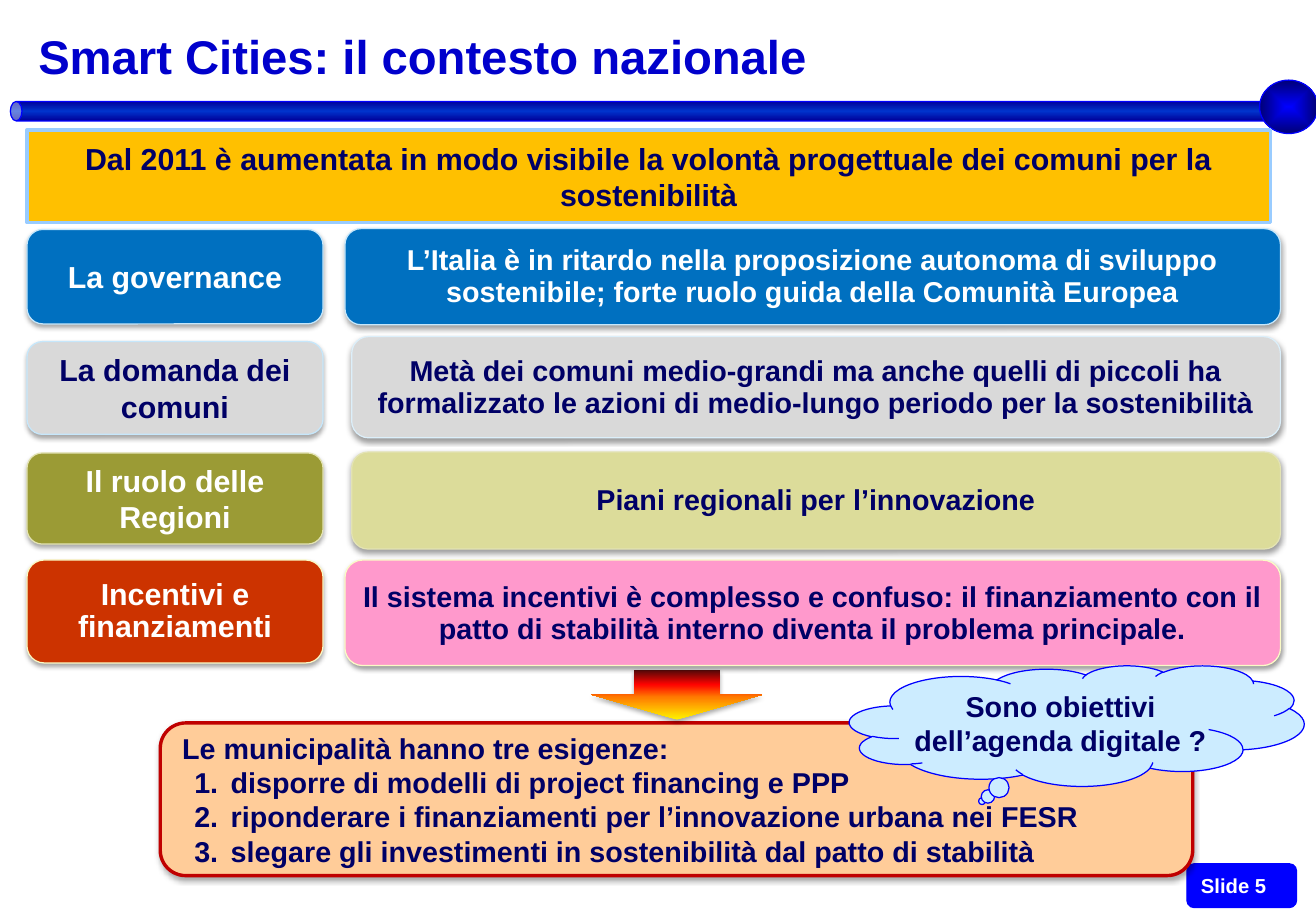
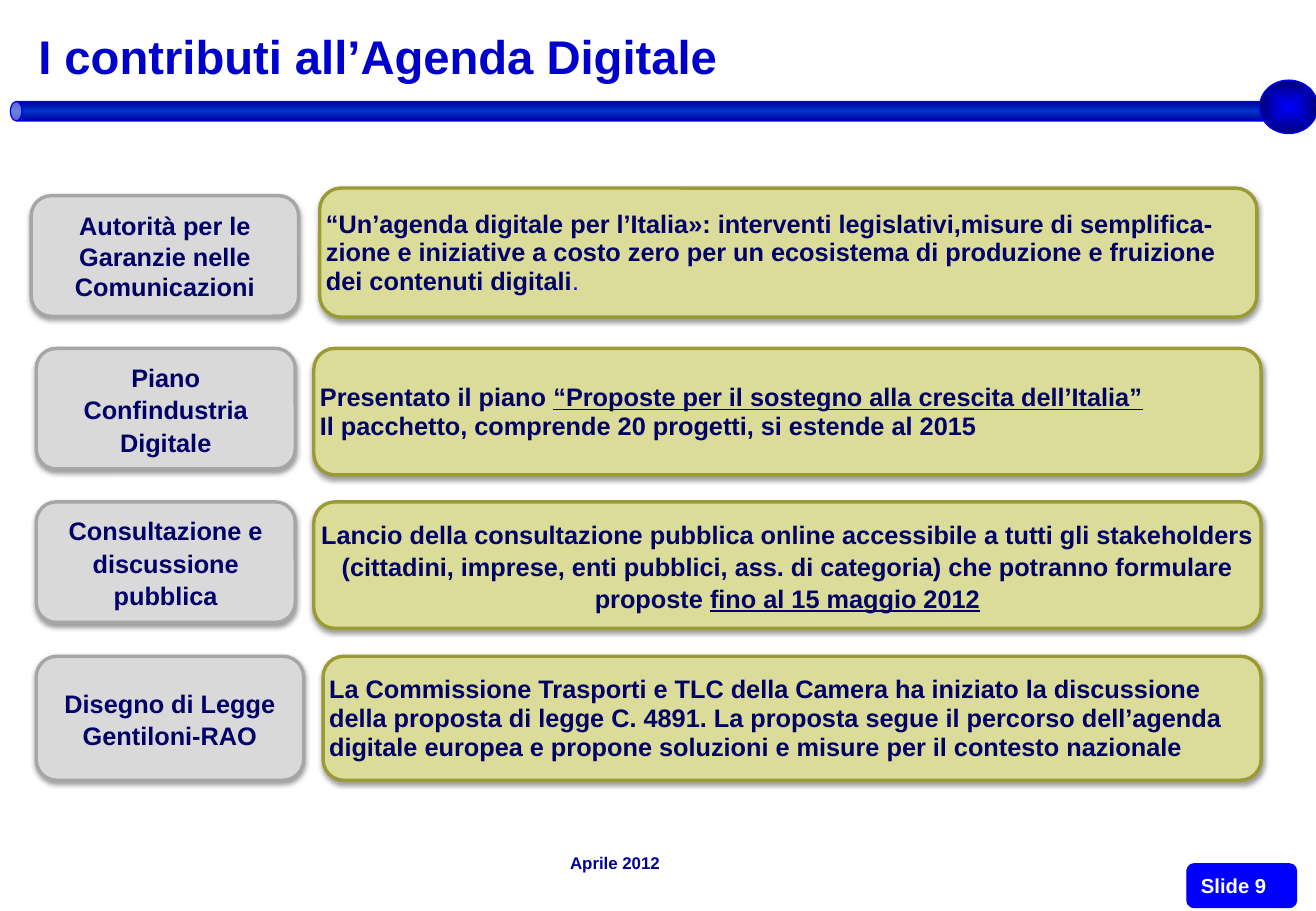
from pptx import Presentation
from pptx.dml.color import RGBColor
from pptx.enum.shapes import MSO_SHAPE
from pptx.enum.text import MSO_ANCHOR, MSO_AUTO_SIZE, PP_ALIGN
from pptx.oxml import parse_xml
from pptx.oxml.ns import nsdecls, qn
from pptx.util import Pt
from lxml import etree

RECT, ROUNDED = MSO_SHAPE.RECTANGLE, MSO_SHAPE.ROUNDED_RECTANGLE
CAN, BALL = MSO_SHAPE.CAN, MSO_SHAPE.OVAL
DOWN_ARROW, CLOUD = MSO_SHAPE.DOWN_ARROW, MSO_SHAPE.CLOUD_CALLOUT
LEFT, CENTER = PP_ALIGN.LEFT, PP_ALIGN.CENTER
TOP, MIDDLE = MSO_ANCHOR.TOP, MSO_ANCHOR.MIDDLE
NO_AUTOFIT = MSO_AUTO_SIZE.NONE

FONT = "Arial"
WHITE = RGBColor(0xFF, 0xFF, 0xFF)
NAVY = RGBColor(0x00, 0x00, 0x66)
TITLE_BLUE = RGBColor(0x00, 0x00, 0xCC)
DATE_BLUE = RGBColor(0x00, 0x00, 0x99)
BAR_BLUE = RGBColor(0x00, 0x33, 0xCC)
BALL_BLUE = RGBColor(0x00, 0x00, 0x76)
PURE_BLUE = RGBColor(0x00, 0x00, 0xFF)
AZURE = RGBColor(0x00, 0x70, 0xC0)
SKY = RGBColor(0x99, 0xCC, 0xFF)
PALE_SKY = RGBColor(0xC6, 0xE7, 0xFB)
MIST = RGBColor(0xDC, 0xEF, 0xFA)
CLOUD_BLUE = RGBColor(0xCC, 0xEC, 0xFF)
GOLD = RGBColor(0xFF, 0xC0, 0x00)
LIGHT_GREY = RGBColor(0xD9, 0xD9, 0xD9)
MID_GREY = RGBColor(0xA6, 0xA6, 0xA6)
OLIVE = RGBColor(0x9B, 0x9B, 0x35)
PALE_OLIVE = RGBColor(0xDC, 0xDC, 0x9A)
OLIVE_EDGE = RGBColor(0xE3, 0xE3, 0xB4)
BRICK = RGBColor(0xCC, 0x33, 0x00)
PINK = RGBColor(0xFF, 0x99, 0xCC)
CREAM = RGBColor(0xFB, 0xFB, 0xC6)
PEACH = RGBColor(0xFF, 0xCC, 0x99)
DARK_RED = RGBColor(0xC0, 0x00, 0x00)
YELLOW = RGBColor(0xFF, 0xF2, 0x00)
ORANGE = RGBColor(0xFF, 0x7A, 0x00)
RED = RGBColor(0xFF, 0x03, 0x00)
MAROON = RGBColor(0x4D, 0x08, 0x08)

PLAIN_INSETS = (7.2, 3.6, 7.2, 3.6)
SIDE_TO_SIDE = (0, 3.6, 0, 3.6)
DETAIL_RIGHT = 759

CONTEXT_ROWS = [
    dict(label="La governance", label_box=(136, 56), label_fill=AZURE,
         label_edge=PALE_SKY, label_color=WHITE, label_spacing=None,
         detail="L’Italia è in ritardo nella proposizione autonoma di sviluppo "
                "sostenibile; forte ruolo guida della Comunità Europea",
         detail_box=(204.5, 135.5, 57), detail_fill=AZURE,
         detail_edge=PALE_SKY, detail_color=WHITE),
    dict(label="La domanda dei comuni", label_box=(202.5, 55), label_fill=LIGHT_GREY,
         label_edge=PALE_SKY, label_color=NAVY, label_spacing=None,
         detail="Metà dei comuni medio-grandi ma anche quelli di piccoli ha "
                "formalizzato le azioni di medio-lungo periodo per la sostenibilità",
         detail_box=(208.5, 199.5, 60), detail_fill=LIGHT_GREY,
         detail_edge=MIST, detail_color=NAVY),
    dict(label="Il ruolo delle Regioni", label_box=(268.5, 54), label_fill=OLIVE,
         label_edge=OLIVE_EDGE, label_color=WHITE, label_spacing=None,
         detail="Piani regionali per l’innovazione",
         detail_box=(208.5, 268, 57.5), detail_fill=PALE_OLIVE,
         detail_edge=OLIVE_EDGE, detail_color=NAVY),
    dict(label="Incentivi e finanziamenti", label_box=(332, 61), label_fill=BRICK,
         label_edge=CREAM, label_color=WHITE, label_spacing=Pt(19),
         detail="Il sistema incentivi è complesso e confuso: il finanziamento con il "
                "patto di stabilità interno diventa il problema principale.",
         detail_box=(204.5, 332, 62.5), detail_fill=PINK,
         detail_edge=CREAM, detail_color=NAVY),
]

NEEDS = [
    "Le municipalità hanno tre esigenze:",
    "disporre di modelli di project financing e PPP",
    "riponderare i finanziamenti per l’innovazione urbana nei FESR",
    "slegare gli investimenti in sostenibilità dal patto di stabilità",
]

UNDERLINED = dict(underline=True)
CONTRIBUTIONS = [
    dict(label=["Autorità per le Garanzie nelle Comunicazioni"],
         label_box=(18.5, 116, 158.5, 71.5), label_spacing=Pt(18),
         detail=[[("“Un’agenda digitale per l’Italia»: interventi legislativi,misure di "
                   "semplifica-zione e iniziative a costo zero per un ecosistema di "
                   "produzione e fruizione dei contenuti digitali", {}),
                  (".", dict(color=PURE_BLUE, bold=False))]],
         detail_box=(189.5, 111.5, 555.5, 76.5), align=LEFT, spacing=Pt(17)),
    dict(label=["Piano", "Confindustria Digitale"],
         label_box=(21.5, 206.5, 153.5, 71.5), label_spacing=Pt(19.2),
         detail=[[("Presentato il piano ", {}),
                  ("“Proposte per il sostegno alla crescita dell’Italia”", UNDERLINED)],
                 "Il pacchetto, comprende 20 progetti, si estende al 2015"],
         detail_box=(186, 206.5, 561.5, 75), align=LEFT, spacing=Pt(17)),
    dict(label=["Consultazione e discussione pubblica"],
         label_box=(21.5, 297.5, 153.5, 71.5), label_spacing=Pt(19.2),
         detail=[[("Lancio della consultazione pubblica online accessibile a tutti gli "
                   "stakeholders (cittadini, imprese, enti pubblici, ass. di categoria) "
                   "che potranno formulare proposte ", {}),
                  ("fino al 15 maggio 2012", UNDERLINED)]],
         detail_box=(186, 297.5, 561.5, 75), align=CENTER, spacing=Pt(19)),
    dict(label=["Disegno di Legge Gentiloni-RAO"],
         label_box=(21.5, 389, 158.5, 73.5), label_spacing=Pt(19.2),
         detail=["La Commissione Trasporti e TLC della Camera ha iniziato la discussione "
                 "della proposta di legge C. 4891. La proposta segue il percorso "
                 "dell’agenda digitale europea e propone soluzioni e misure per il "
                 "contesto nazionale"],
         detail_box=(191.5, 389, 556, 73.5), align=LEFT, spacing=Pt(17)),
]


def number_paragraph(paragraph):
    """Give a paragraph an automatic number with a hanging indent."""
    properties = paragraph._p.get_or_add_pPr()
    properties.set("marL", str(Pt(28.8)))
    properties.set("indent", str(-Pt(21.6)))
    etree.SubElement(properties, qn("a:buAutoNum"), type="arabicPeriod")


def write_text(target, paragraphs, size=17, color=NAVY, bold=True, align=CENTER,
               anchor=MIDDLE, insets=PLAIN_INSETS, spacing=None, numbered_from=None):
    """Fill a shape with paragraphs, each a string or a list of (text, overrides) runs."""
    frame = target.text_frame
    frame.word_wrap = True
    frame.auto_size = NO_AUTOFIT
    frame.vertical_anchor = anchor
    (frame.margin_left, frame.margin_top,
     frame.margin_right, frame.margin_bottom) = map(Pt, insets)
    for index, content in enumerate(paragraphs):
        paragraph = frame.add_paragraph() if index else frame.paragraphs[0]
        paragraph.alignment = align
        if spacing:
            paragraph.line_spacing = spacing
        if numbered_from is not None and index >= numbered_from:
            number_paragraph(paragraph)
        runs = [(content, {})] if isinstance(content, str) else content
        for text, overrides in runs:
            run = paragraph.add_run()
            run.text = text
            font = run.font
            font.name, font.size = FONT, Pt(size)
            font.bold = overrides.get("bold", bold)
            font.color.rgb = overrides.get("color", color)
            if overrides.get("underline"):
                font.underline = True


def add_shadow(shape, opacity, distance):
    """Add a soft black shadow straight below a shape."""
    effects = shape._element.spPr.find(qn("a:effectLst"))
    shadow = etree.SubElement(effects, qn("a:outerShdw"), blurRad=str(Pt(3.1)),
                              dist=str(Pt(distance)), dir="5400000", rotWithShape="0")
    black = etree.SubElement(shadow, qn("a:srgbClr"), val="000000")
    etree.SubElement(black, qn("a:alpha"), val=str(opacity * 1000))


def add_gradient(shape, stops, angle=None):
    """Fill a shape with a linear gradient, or one from its centre without an angle."""
    shape.fill.gradient()
    properties = shape._element.spPr
    marks = "".join(f'<a:gs pos="{position * 1000}"><a:srgbClr val="{color}"/></a:gs>'
                    for position, color in stops)
    if angle is None:
        course = ('<a:path path="shape"><a:fillToRect l="50000" t="50000" '
                  'r="50000" b="50000"/></a:path>')
    else:
        course = f'<a:lin ang="{angle * 60000}" scaled="0"/>'
    gradient = parse_xml(f'<a:gradFill {nsdecls("a")} rotWithShape="1">'
                         f'<a:gsLst>{marks}</a:gsLst>{course}</a:gradFill>')
    properties.replace(properties.find(qn("a:gradFill")), gradient)


def add_block(slide, kind, box, fill=None, edge=None, edge_width=0.75, shadow=None):
    """Add a preset shape with its fill, outline and optional (opacity, distance) shadow."""
    block = slide.shapes.add_shape(kind, *map(Pt, box))
    block.shadow.inherit = False
    if fill is not None:
        block.fill.solid()
        block.fill.fore_color.rgb = fill
    if edge is None:
        block.line.fill.background()
    else:
        block.line.color.rgb = edge
        block.line.width = Pt(edge_width)
    if shadow:
        add_shadow(block, *shadow)
    return block


def add_framed_slide(deck, title, number):
    """Add a slide with its title, blue bar with ball, and number badge."""
    slide = deck.slides.add_slide(deck.slide_layouts[5])
    heading = slide.shapes.title
    heading.left, heading.top, heading.width, heading.height = map(Pt, (15.5, 0, 764, 72))
    write_text(heading, [title], size=28, color=TITLE_BLUE, align=LEFT, spacing=0.8)
    bar = add_block(slide, CAN, (376.6, -310.3, 11.5, 752.4), edge=PURE_BLUE)
    bar.rotation = 270
    bar.adjustments[0] = 0.6
    add_gradient(bar, [(0, DATE_BLUE), (50, BAR_BLUE), (100, DATE_BLUE)], angle=0)
    ball = add_block(slide, BALL, (746.6, 47.5, 34.5, 31.7), edge=PURE_BLUE)
    add_gradient(ball, [(0, PURE_BLUE), (100, BALL_BLUE)])
    badge = add_block(slide, ROUNDED, (703.5, 512, 65, 26), PURE_BLUE, PURE_BLUE)
    write_text(badge, [f"Slide {number}"], size=12, color=WHITE, align=LEFT)
    return slide


def add_context_row(slide, row):
    """Add a theme label and its finding."""
    top, height = row["label_box"]
    label = add_block(slide, ROUNDED, (16, top, 175.5, height),
                      row["label_fill"], row["label_edge"], shadow=(35, 1.8))
    write_text(label, [row["label"]], size=18, color=row["label_color"],
               spacing=row["label_spacing"])
    left, top, height = row["detail_box"]
    detail = add_block(slide, ROUNDED, (left, top, DETAIL_RIGHT - left, height),
                       row["detail_fill"], row["detail_edge"], shadow=(38, 1.6))
    write_text(detail, [row["detail"]], color=row["detail_color"], spacing=Pt(19))


def add_contribution(slide, row):
    """Add a contributor label and the description of its contribution."""
    label = add_block(slide, ROUNDED, row["label_box"], LIGHT_GREY, MID_GREY, 2, (38, 1.6))
    write_text(label, row["label"], size=15, insets=SIDE_TO_SIDE,
               spacing=row["label_spacing"])
    detail = add_block(slide, ROUNDED, row["detail_box"], PALE_OLIVE, OLIVE, 2, (38, 1.6))
    write_text(detail, row["detail"], size=15, insets=SIDE_TO_SIDE,
               align=row["align"], spacing=row["spacing"])


def build_context(deck):
    """Build the slide on the national context."""
    slide = add_framed_slide(deck, "Smart Cities: il contesto nazionale", 5)
    banner = add_block(slide, RECT, (16, 77, 737, 55), GOLD, SKY, 2)
    write_text(banner, ["Dal 2011 è aumentata in modo visibile la volontà progettuale "
                        "dei comuni per la sostenibilità"],
               size=18, anchor=TOP, insets=(2.9, 5.8, 2.9, 5.8))
    for row in CONTEXT_ROWS:
        add_context_row(slide, row)
    needs = add_block(slide, ROUNDED, (95, 428.5, 612, 90.5), PEACH, DARK_RED, 2, (35, 1.8))
    write_text(needs, NEEDS, align=LEFT, insets=(8.6, 3.6, 5.8, 3.6), numbered_from=1)
    arrow = add_block(slide, DOWN_ARROW, (350.5, 397, 101.5, 29.5), shadow=(35, 1.8))
    add_gradient(arrow, [(0, YELLOW), (45, ORANGE), (70, RED), (100, MAROON)], angle=270)
    question = add_block(slide, CLOUD, (503.5, 394.5, 269.5, 71.5), CLOUD_BLUE, PURE_BLUE)
    write_text(question, ["Sono obiettivi dell’agenda digitale ?"],
               insets=(0, 2.9, 0, 2.9))


def build_contributions(deck):
    """Build the slide on the contributions to the digital agenda."""
    slide = add_framed_slide(deck, "I contributi all’Agenda Digitale", 9)
    for row in CONTRIBUTIONS:
        add_contribution(slide, row)
    date = slide.shapes.add_textbox(Pt(118), Pt(503), Pt(493), Pt(18))
    write_text(date, ["Aprile 2012"], size=10, color=DATE_BLUE, anchor=TOP, spacing=0.9)


def main():
    """Build and save the deck."""
    deck = Presentation()
    deck.slide_width, deck.slide_height = Pt(780), Pt(540)
    build_context(deck)
    build_contributions(deck)
    deck.save("out.pptx")


if __name__ == "__main__":
    main()
